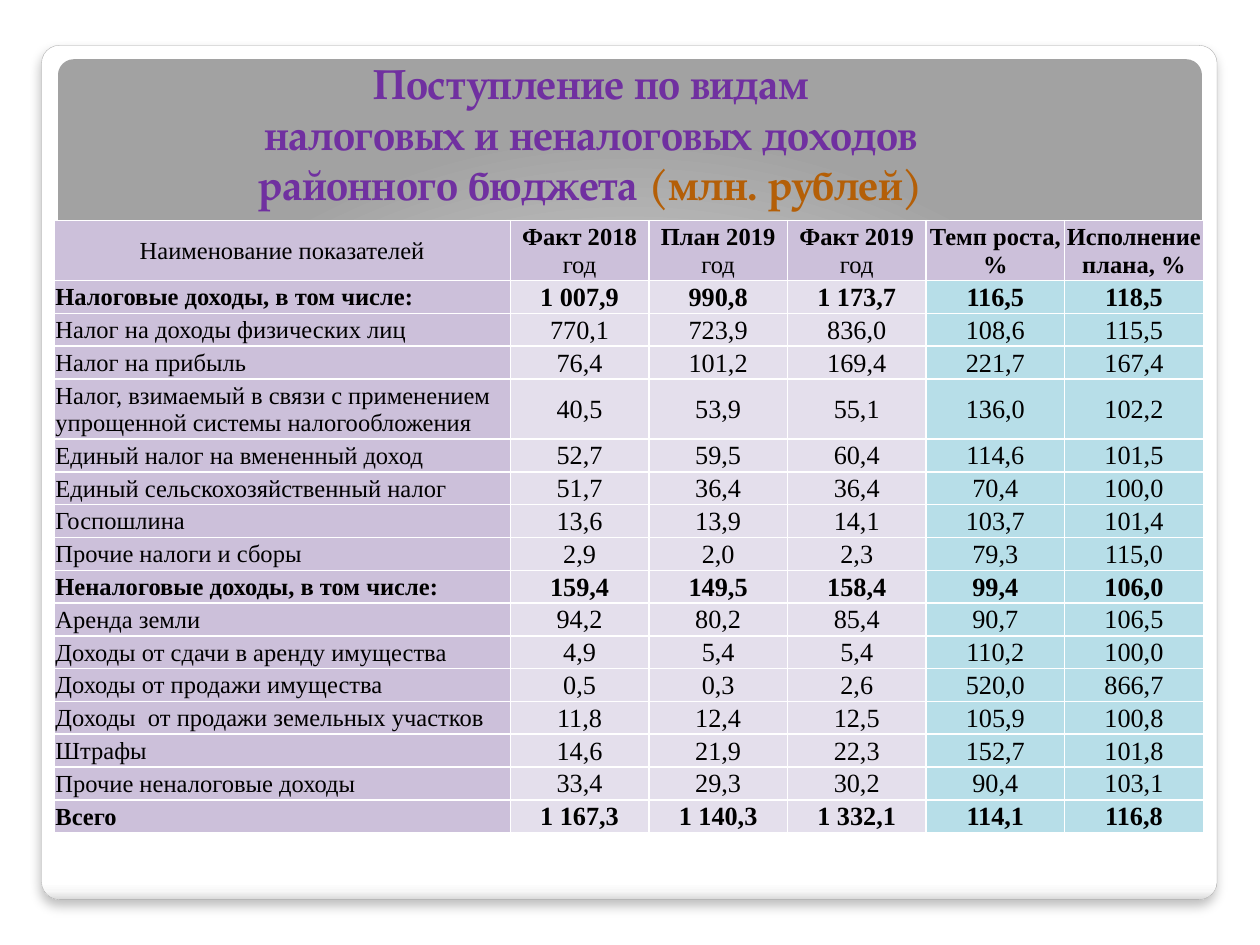
"""Build a slide with a table of district budget revenues by type."""
from lxml import etree
from pptx import Presentation
from pptx.dml.color import RGBColor
from pptx.enum import shapes, text
from pptx.oxml import parse_xml
from pptx.oxml.ns import nsdecls, qn
from pptx.util import Inches, Pt

COLORS = {
    "white": "FFFFFF", "black": "000000", "outline": "A4A4A4",
    "title": "7030A0", "unit": "B45F07",
    "label": "CCC0DA", "amount": "E4DFEC", "percent": "B7DEE8",
}
FRAME_STOPS = [(0, "FFFFFF"), (98, "FFFFFF"), (99, "F7F7F7"), (100, "DADADA")]
PANEL_STOPS = [(0, "FFFFFF"), (55, "E1E1E1"), (100, "A2A2A2")]
LINEAR = '<a:lin ang="5400000" scaled="0"/>'
RADIAL = ('<a:path path="circle"><a:fillToRect l="50000" t="175000" '
          'r="50000" b="-75000"/></a:path>')
HEADERS = [
    [("Наименование показателей", False)],
    [("Факт 2018", True), (" год", False)],
    [("План 2019", True), (" год", False)],
    [("Факт 2019", True), (" год", False)],
    [("Темп роста, %", True)],
    [("Исполнение плана, %", True)],
]
ROWS = [
    ("Налоговые доходы, в том числе:", "1 007,9", "990,8", "1 173,7", "116,5", "118,5"),
    ("Налог на доходы физических лиц", "770,1", "723,9", "836,0", "108,6", "115,5"),
    ("Налог на прибыль", "76,4", "101,2", "169,4", "221,7", "167,4"),
    ("Налог, взимаемый в связи с применением упрощенной системы налогообложения",
     "40,5", "53,9", "55,1", "136,0", "102,2"),
    ("Единый налог на вмененный доход", "52,7", "59,5", "60,4", "114,6", "101,5"),
    ("Единый сельскохозяйственный налог", "51,7", "36,4", "36,4", "70,4", "100,0"),
    ("Госпошлина", "13,6", "13,9", "14,1", "103,7", "101,4"),
    ("Прочие налоги и сборы", "2,9", "2,0", "2,3", "79,3", "115,0"),
    ("Неналоговые доходы, в том числе:", "159,4", "149,5", "158,4", "99,4", "106,0"),
    ("Аренда земли", "94,2", "80,2", "85,4", "90,7", "106,5"),
    ("Доходы от сдачи в аренду имущества", "4,9", "5,4", "5,4", "110,2", "100,0"),
    ("Доходы от продажи имущества", "0,5", "0,3", "2,6", "520,0", "866,7"),
    ("Доходы  от продажи земельных участков", "11,8", "12,4", "12,5", "105,9", "100,8"),
    ("Штрафы", "14,6", "21,9", "22,3", "152,7", "101,8"),
    ("Прочие неналоговые доходы", "33,4", "29,3", "30,2", "90,4", "103,1"),
    ("Всего", "1 167,3", "1 140,3", "1 332,1", "114,1", "116,8"),
]
TOTAL_ROWS = {1, 9, 16}
TALL_ROWS = {0: 0.44, 4: 0.43}


def add_gradient_box(page, place, stops, direction):
    box = page.shapes.add_shape(shapes.MSO_SHAPE.ROUNDED_RECTANGLE, *map(Inches, place))
    box.adjustments[0] = 0.021
    box.shadow.inherit = False
    box.line.fill.background()
    box.fill.background()
    stop_xml = "".join(f'<a:gs pos="{pos * 1000}"><a:srgbClr val="{color}"/></a:gs>'
                       for pos, color in stops)
    gradient = parse_xml(f'<a:gradFill {nsdecls("a")} rotWithShape="1">'
                         f'<a:gsLst>{stop_xml}</a:gsLst>{direction}</a:gradFill>')
    properties = box._element.spPr
    properties.replace(properties.find(qn("a:noFill")), gradient)
    return box


def style_font(font, name, size, color, bold):
    font.name = name
    font.size = Pt(size)
    font.bold = bold
    font.color.rgb = RGBColor.from_string(COLORS[color])


deck = Presentation()
deck.slide_width, deck.slide_height = Inches(10), Inches(7.5)
page = deck.slides.add_slide(deck.slide_layouts[6])

frame = add_gradient_box(page, (0.33, 0.36, 9.33, 6.78), FRAME_STOPS, LINEAR)
frame.line.color.rgb = RGBColor.from_string(COLORS["outline"])
frame.line.width = Pt(0.16)
frame._element.spPr.find(qn("a:effectLst")).append(parse_xml(
    f'<a:outerShdw {nsdecls("a")} blurRad="{Pt(6)}" dist="{Pt(4)}" dir="5400000" '
    f'algn="t" rotWithShape="0"><a:srgbClr val="{COLORS["black"]}">'
    '<a:alpha val="25000"/></a:srgbClr></a:outerShdw>'))
add_gradient_box(page, (0.46, 0.47, 9.08, 6), PANEL_STOPS, RADIAL)

title = page.shapes.add_textbox(Inches(0), Inches(0.38), Inches(9.38), Inches(1.36)).text_frame
title.word_wrap = True
title.vertical_anchor = text.MSO_ANCHOR.MIDDLE
title_lines = ["Поступление по видам", "налоговых и неналоговых доходов",
               "районного бюджета "]
for index, line in enumerate(title_lines):
    para = title.add_paragraph() if index else title.paragraphs[0]
    para.alignment = text.PP_ALIGN.CENTER
    span = para.add_run()
    span.text = line
    style_font(span.font, "TeX Gyre Pagella", 24, "title", True)
unit = para.add_run()
unit.text = "(млн. рублей)"
style_font(unit.font, "TeX Gyre Pagella", 24, "unit", True)

table = page.shapes.add_table(len(ROWS) + 1, len(HEADERS), Inches(0.43), Inches(1.75),
                              Inches(9.12), Inches(4.77)).table
table.first_row = table.horz_banding = False
for col, column in enumerate(table.columns):
    column.width = Inches(1.1 if col else 3.62)

body = [[[(value, row in TOTAL_ROWS)] for value in values]
        for row, values in enumerate(ROWS, 1)]
for row, cells in enumerate([HEADERS] + body):
    table.rows[row].height = Inches(TALL_ROWS.get(row, 0.26))
    for col, spans in enumerate(cells):
        cell = table.cell(row, col)
        cell.margin_left = cell.margin_right = cell.margin_top = Inches(0.01)
        cell.margin_bottom = Inches(0)
        cell.vertical_anchor = text.MSO_ANCHOR.MIDDLE
        para = cell.text_frame.paragraphs[0]
        is_number = row > 0 and col > 0
        para.alignment = text.PP_ALIGN.LEFT if row and not col else text.PP_ALIGN.CENTER
        for wording, bold in spans:
            span = para.add_run()
            span.text = wording
            style_font(span.font, "Times New Roman", 15 if is_number else 14, "black", bold)
        for side in ("lnL", "lnR", "lnT", "lnB"):
            border = etree.SubElement(cell._tc.get_or_add_tcPr(), qn(f"a:{side}"), w=str(Pt(1)))
            paint = etree.SubElement(border, qn("a:solidFill"))
            etree.SubElement(paint, qn("a:srgbClr"), val=COLORS["white"])
        cell.fill.solid()
        shade = "label" if not is_number else "amount" if col < 4 else "percent"
        cell.fill.fore_color.rgb = RGBColor.from_string(COLORS[shade])

deck.save("out.pptx")
